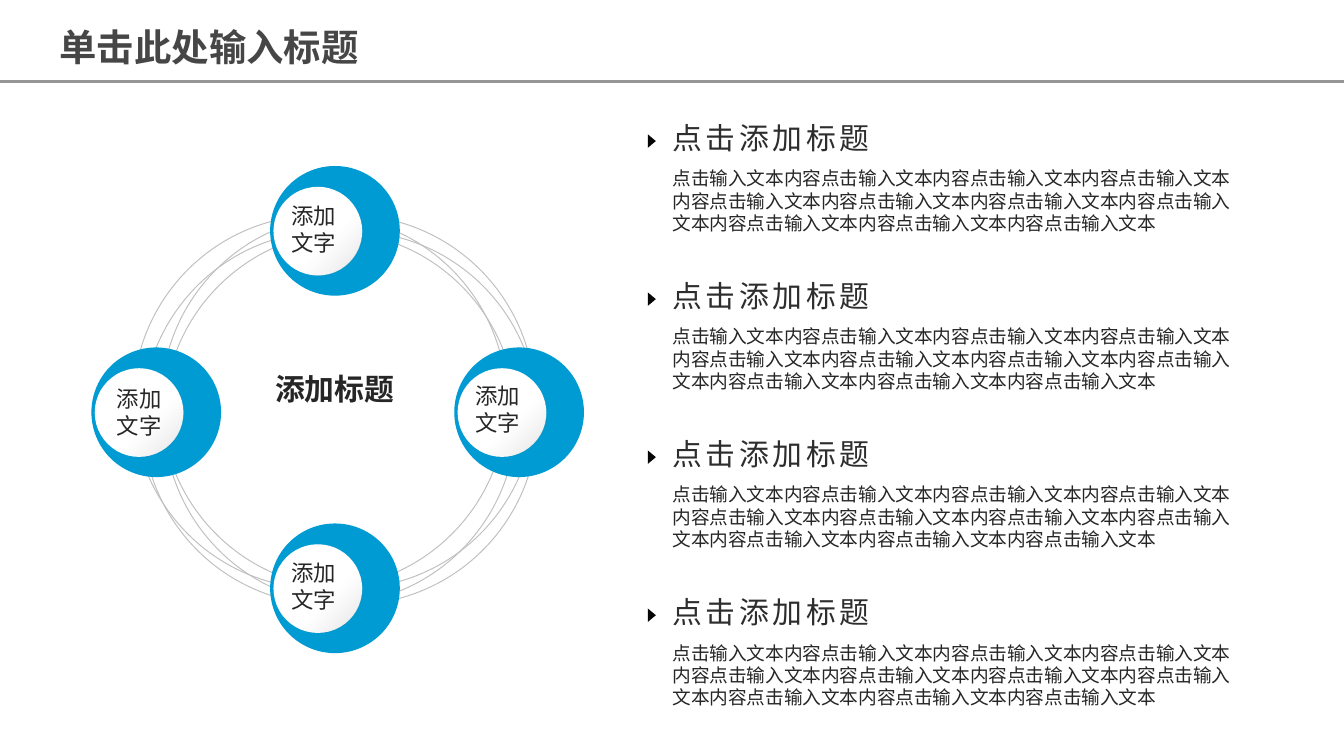
from dataclasses import dataclass

from lxml import etree
from pptx import Presentation
from pptx.dml.color import RGBColor
from pptx.enum.shapes import MSO_CONNECTOR, MSO_SHAPE
from pptx.enum.text import PP_ALIGN
from pptx.oxml import parse_xml
from pptx.oxml.ns import qn
from pptx.util import Inches, Pt

OVAL = MSO_SHAPE.OVAL
ARROW = MSO_SHAPE.ISOSCELES_TRIANGLE
STRAIGHT = MSO_CONNECTOR.STRAIGHT
LEFT, CENTER = PP_ALIGN.LEFT, PP_ALIGN.CENTER

FACE = "Noto Sans CJK SC"
BLUE, WHITE, BLACK = "009BD2", "FFFFFF", "060606"
GRAY, RING, INK = "969696", "BFBFBF", "262626"
COLS, ROWS = 100, 56.25  # the slide as a grid of square cells
CELL = Inches(10) / COLS

SHADE = """
<a:gradFill xmlns:a="http://schemas.openxmlformats.org/drawingml/2006/main" rotWithShape="1">
  <a:gsLst>
    <a:gs pos="61000"><a:srgbClr val="D9D9D9"><a:alpha val="0"/></a:srgbClr></a:gs>
    <a:gs pos="100000"><a:srgbClr val="BFBFBF"><a:alpha val="50000"/></a:srgbClr></a:gs>
  </a:gsLst>
  <a:path path="circle"><a:fillToRect r="100000" b="100000"/></a:path>
</a:gradFill>"""


@dataclass
class Box:
    """Place and size in grid cells."""
    x: float
    y: float
    w: float
    h: float

    def emu(self) -> list[int]:
        return [cells(v) for v in (self.x, self.y, self.w, self.h)]


@dataclass
class Style:
    size: float
    color: str = INK
    bold: bool = False
    align: int = LEFT
    space: float = 1
    track: int = 0


@dataclass
class Orb:
    """Place of a disc, and the shift of its label."""
    x: float
    y: float
    dx: float = -0.6
    dy: float = 2.2


TITLE = Style(20, "464646", bold=True, space=1.2)
HUB = Style(16, bold=True, align=CENTER)
LABEL = Style(12, align=CENTER)
HEAD = Style(16, "2D2D2D", track=200)
BODY = Style(10)

RINGS = [(10.6, 17.2), (12.2, 17.2), (9.9, 16), (12, 16)]
ORBS = [Orb(6.8, 25.85, -0.3, 2.3), Orb(20.1, 12.35),
        Orb(33.8, 25.85, dy=2.1), Orb(20.1, 38.95)]
COUNT, TOP, PITCH = 4, 8.4, 11.76
PHRASE = "点击输入文本"
PROSE = (PHRASE + "内容") * 10 + PHRASE


def cells(n: float) -> int:
    return round(n * CELL)


def rgb(code: str) -> RGBColor:
    return RGBColor.from_string(code)


def shape(slide, kind, box: Box, fill: str = "", line: str = ""):
    item = slide.shapes.add_shape(kind, *box.emu())
    item.shadow.inherit = False
    if fill:
        item.fill.solid()
        item.fill.fore_color.rgb = rgb(fill)
    else:
        item.fill.background()
    if line:
        item.line.color.rgb = rgb(line)
        item.line.width = Pt(0.5)
    else:
        item.line.fill.background()
    return item


def text(slide, box: Box, style: Style, *lines: str, wrap: bool = True) -> None:
    frame = slide.shapes.add_textbox(*box.emu()).text_frame
    frame.word_wrap = wrap
    frame.text = "\n".join(lines)
    for para in frame.paragraphs:
        para.alignment = style.align
        para.line_spacing = style.space
        font = para.font
        font.size, font.bold, font.name = Pt(style.size), style.bold, FACE
        font.color.rgb = rgb(style.color)
        props = para._p.pPr.find(qn("a:defRPr"))
        etree.SubElement(props, qn("a:ea")).set("typeface", FACE)
        if style.track:
            props.set("spc", str(style.track))


def rule(slide, y: float) -> None:
    line = slide.shapes.add_connector(STRAIGHT, 0, cells(y), cells(COLS), cells(y))
    line.line.color.rgb = rgb(GRAY)
    line.line.width = Pt(1.75)
    etree.SubElement(line._element.spPr, qn("a:effectLst"))


def shade(item) -> None:
    """Swap the fill for a soft gray that grows from the top left."""
    props = item._element.spPr
    props.replace(props.find(qn("a:noFill")), parse_xml(SHADE))


def orb(slide, spot: Orb) -> None:
    shape(slide, OVAL, Box(spot.x, spot.y, 9.65, 9.65), BLUE)
    disc = Box(spot.x + 0.25, spot.y + 1.55, 6.6, 6.6)
    shape(slide, OVAL, disc, WHITE)
    shade(shape(slide, OVAL, disc))
    text(slide, Box(spot.x + spot.dx, spot.y + spot.dy, 7.7, 5), LABEL, "添加", "文字")


def entry(slide, y: float) -> None:
    text(slide, Box(49.05, y, 17.2, 3.7), HEAD, "点击添加标题", wrap=False)
    text(slide, Box(49.05, y + 3.55, 43.6, 6.1), BODY, PROSE)
    shape(slide, ARROW, Box(48, y + 1.8, 1, 0.6), BLACK).rotation = 90


def main() -> None:
    deck = Presentation()
    deck.slide_width, deck.slide_height = cells(COLS), cells(ROWS)
    slide = deck.slides.add_slide(deck.slide_layouts[6])
    rule(slide, 6.05)
    text(slide, Box(3.45, 0.65, 26.1, 5), TITLE, "单击此处输入标题")
    for x, y in RINGS:
        shape(slide, OVAL, Box(x, y, 27.8, 27.8), line=RING)
    text(slide, Box(17, 27.1, 15.8, 3.7), HUB, "添加标题")
    for spot in ORBS:
        orb(slide, spot)
    for row in range(COUNT):
        entry(slide, TOP + row * PITCH)
    deck.save("out.pptx")


if __name__ == "__main__":
    main()
